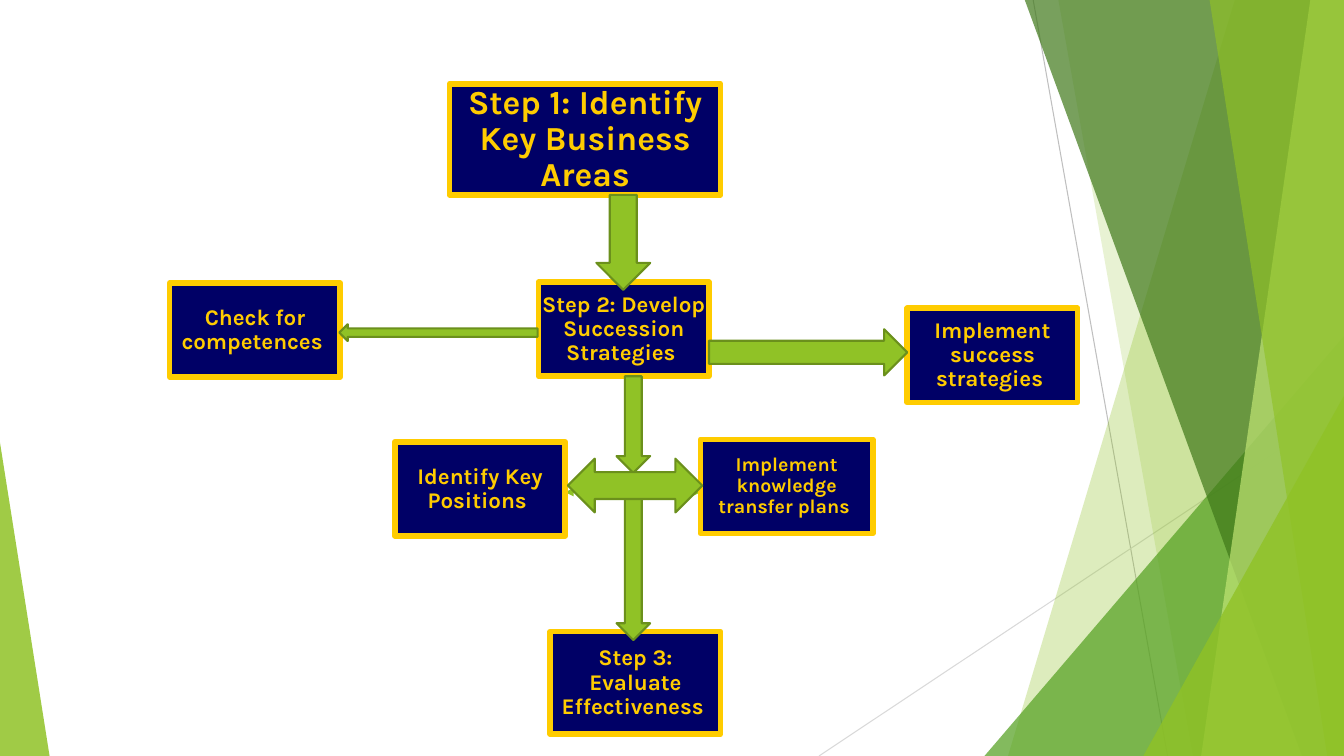
from lxml import etree
from pptx import Presentation
from pptx import util as u
from pptx.dml.color import RGBColor
from pptx.enum import shapes, text
from pptx.oxml import ns

# Square grid cells, a twelfth of an inch each
COLUMNS, ROWS = 160, 90
CELL = u.Inches(1) / 12
FONT = "Karla"
COLOURS = {
    "navy": "000066", "gold": "FFCC00", "lime": "90C226", "olive": "6B901C",
    "green": "54A021", "forest": "3F7819", "pale": "C0E474",
    "grey": "BFBFBF", "silver": "D9D9D9",
}
SHAPE = shapes.MSO_SHAPE


def cells(*counts):
    return [u.Emu(round(count * CELL)) for count in counts]


def colour(name):
    return RGBColor.from_string(COLOURS[name])


def paint(shape, fill, line=None, width=0, opacity=100):
    shape.shadow.inherit = False
    shape.fill.solid()
    shape.fill.fore_color.rgb = colour(fill)
    if opacity < 100:
        tint = shape.fill._xPr.find(".//" + ns.qn("a:srgbClr"))
        etree.SubElement(tint, ns.qn("a:alpha"), val=str(opacity * 1000))
    if line:
        shape.line.color.rgb = colour(line)
        shape.line.width = u.Pt(width)
    else:
        shape.line.fill.background()


def add_line(page, start, end, name, width, arrowheads=False):
    line = page.shapes.add_connector(
        shapes.MSO_CONNECTOR.STRAIGHT, *cells(*start, *end))
    line.line.color.rgb = colour(name)
    line.line.width = u.Pt(width)
    if arrowheads:
        outline = line.line._get_or_add_ln()
        for end_tag in ("a:headEnd", "a:tailEnd"):
            etree.SubElement(outline, ns.qn(end_tag), type="triangle")
    etree.SubElement(line._element.spPr, ns.qn("a:effectLst"))


def add_band(page, top, bottom, name, opacity):
    """Fill from a slanted left edge to the right side of the slide."""
    builder = page.shapes.build_freeform(top, 0, scale=CELL)
    builder.add_line_segments(
        [(COLUMNS, 0), (COLUMNS, ROWS), (bottom, ROWS)], close=True)
    paint(builder.convert_to_shape(), name, opacity=opacity)


def add_corner(page, left, top, width, apex, name, opacity):
    """Triangle standing on the bottom of the slide."""
    corner = page.shapes.add_shape(
        SHAPE.ISOSCELES_TRIANGLE, *cells(left, top, width, ROWS - top))
    corner.adjustments[0] = apex
    paint(corner, name, opacity=opacity)


def add_step(page, wording, left, top, width=20.3, height=11.2, size=16):
    box = page.shapes.add_shape(
        SHAPE.RECTANGLE, *cells(left, top, width, height))
    paint(box, "navy", "gold", 4)
    frame = box.text_frame
    frame.word_wrap = True
    frame.vertical_anchor = text.MSO_ANCHOR.MIDDLE
    frame.margin_left = frame.margin_right = u.Inches(0.01)
    frame.margin_top = frame.margin_bottom = u.Inches(0.01)
    para = frame.paragraphs[0]
    para.alignment = text.PP_ALIGN.CENTER
    para.line_spacing = 0.9
    span = para.add_run()
    span.text = wording
    span.font.name = FONT
    span.font.size = u.Pt(size)
    span.font.bold = True
    span.font.color.rgb = colour("gold")


def add_arrow(page, kind, *place):
    arrow = page.shapes.add_shape(kind, *cells(*place))
    paint(arrow, "lime", "olive", 1.5)


def add_backdrop(page):
    add_line(page, (123, 0), (139, ROWS), "grey", 0.75)
    add_line(page, (COLUMNS, 48.4), (97.5, ROWS), "silver", 0.75)
    add_band(page, 147.4, 120.5, "lime", 30)
    add_band(page, 126, 142, "lime", 20)
    add_corner(page, 117.2, 40, 42.8, 1, "green", 72)
    add_band(page, 122.5, 155, "forest", 70)
    add_band(page, 156.4, 143.1, "pale", 70)
    add_band(page, 143.5, 158.1, "lime", 65)
    add_corner(page, 136.1, 47.1, 23.9, 1, "lime", 80)
    add_corner(page, 0, 52.7, 5.9, 0, "lime", 85)


def main():
    deck = Presentation()
    deck.slide_width, deck.slide_height = cells(COLUMNS, ROWS)
    page = deck.slides.add_slide(deck.slide_layouts[6])
    add_backdrop(page)

    # Steps and the tasks beside them
    add_step(page, "Step 2: Develop Succession Strategies ", 64.1, 33.6)
    add_line(page, (67.3, 58.6), (83.4, 58.6), "lime", 1, arrowheads=True)
    add_step(page, "Step 1: Identify Key Business Areas",
             53.5, 10, 32.3, 13.2, size=24)
    add_step(page, "Check for competences ", 20.2, 33.7)
    add_step(page, "Identify Key Positions ", 47, 52.6)
    add_step(page, "Step 3: Evaluate Effectiveness ", 65.5, 75.2, height=12.2)
    add_step(page, "Implement success strategies ", 108, 36.7)
    add_step(page, "Implement knowledge transfer plans ",
             83.4, 52.3, 20.5, size=14)

    # Block arrows between the boxes
    add_arrow(page, SHAPE.DOWN_ARROW, 71, 23.2, 6.4, 11.3)
    add_arrow(page, SHAPE.DOWN_ARROW, 73.4, 44.8, 4, 11.5)
    add_arrow(page, SHAPE.DOWN_ARROW, 73.4, 59, 4, 17.2)
    add_arrow(page, SHAPE.RIGHT_ARROW, 84.4, 39.2, 23.6, 5.5)
    add_arrow(page, SHAPE.LEFT_ARROW, 40.4, 38.6, 23.6, 2)
    add_arrow(page, SHAPE.LEFT_RIGHT_ARROW, 67.6, 54.6, 16, 6.4)

    deck.save("out.pptx")


if __name__ == "__main__":
    main()
